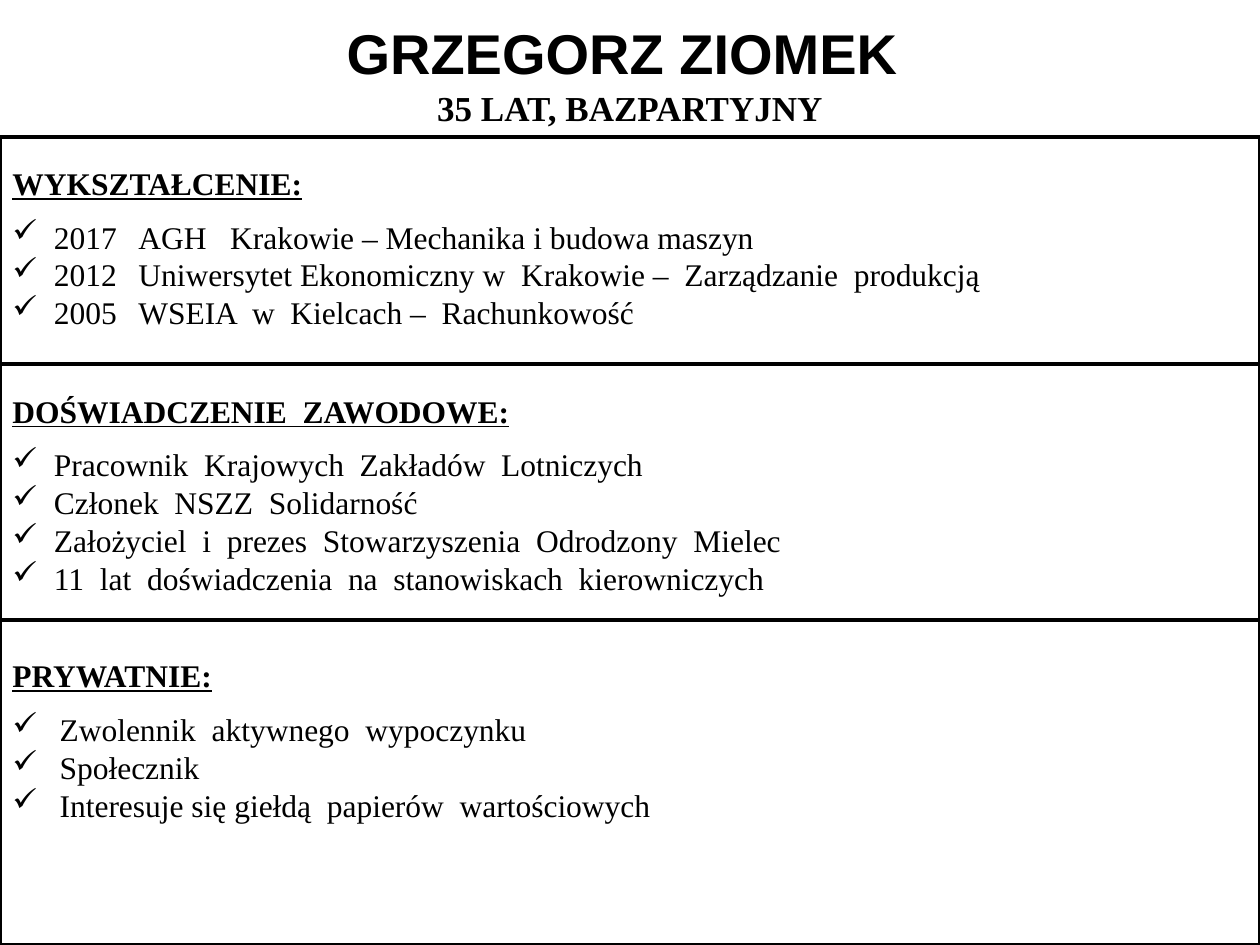
"""Build a candidate profile slide with three framed sections."""
from lxml.etree import SubElement
from pptx import Presentation
from pptx.dml.color import RGBColor
from pptx.enum.shapes import MSO_SHAPE
from pptx.enum.text import MSO_ANCHOR, PP_ALIGN
from pptx.oxml.ns import qn
from pptx.util import Pt


def color(code):
    return RGBColor.from_string(code)


def write(para, text, **form):
    para.text = text
    para.font.color.rgb = color("000000")
    for key, val in form.items():
        setattr(para.font, key, val)


deck = Presentation()
deck.slide_width, deck.slide_height = Pt(720), Pt(540)
slide = deck.slides.add_slide(deck.slide_layouts[6])
serif = {"name": "Times New Roman", "size": Pt(18)}

box = slide.shapes.add_textbox(0, 0, Pt(720), Pt(84))
frame = box.text_frame
frame.word_wrap = True
frame.vertical_anchor = MSO_ANCHOR.MIDDLE
lines = [
    ("GRZEGORZ ZIOMEK ", "Arial", 32),
    ("35 LAT, BAZPARTYJNY", "Times New Roman", 20),
]
for num, (text, face, size) in enumerate(lines):
    para = frame.add_paragraph() if num else frame.paragraphs[0]
    para.alignment = PP_ALIGN.CENTER
    write(para, text, name=face, size=Pt(size), bold=True)

parts = [
    (90, 106, 23.75, "WYKSZTAŁCENIE:", [
        "2017 \tAGH   Krakowie – Mechanika i budowa maszyn",
        "2012 \tUniwersytet Ekonomiczny w  Krakowie –  Zarządzanie  produkcją",
        "2005 \tWSEIA  w  Kielcach –  Rachunkowość",
    ]),
    (220.25, 128, 23.75, "DOŚWIADCZENIE  ZAWODOWE:", [
        "Pracownik  Krajowych  Zakładów  Lotniczych",
        "Członek  NSZZ  Solidarność",
        "Założyciel  i  prezes  Stowarzyszenia  Odrodzony  Mielec",
        "11  lat  doświadczenia  na  stanowiskach  kierowniczych",
    ]),
    (371.5, 104, 27, "PRYWATNIE:", [
        "Zwolennik  aktywnego  wypoczynku",
        "Społecznik",
        "Interesuje się giełdą  papierów  wartościowych",
    ]),
]
for top, height, gap, head, items in parts:
    box = slide.shapes.add_textbox(0, Pt(top), Pt(720), Pt(height))
    frame = box.text_frame
    frame.word_wrap = True
    para = frame.paragraphs[0]
    para.space_after = Pt(9.2)
    write(para, head, bold=True, underline=True, **serif)
    for text in items:
        para = frame.add_paragraph()
        props = para._p.get_or_add_pPr()
        props.set("marL", str(Pt(gap)))
        props.set("indent", str(-Pt(gap)))
        SubElement(props, qn("a:buChar"), char="✓")
        if "\t" in text:
            tabs = SubElement(props, qn("a:tabLst"))
            SubElement(tabs, qn("a:tab"), pos=str(Pt(72)), algn="l")
        write(para, text, **serif)

edges = [78.5, 208, 354.25, 540]
for top, end in zip(edges, edges[1:]):
    rect = slide.shapes.add_shape(
        MSO_SHAPE.RECTANGLE, 0, Pt(top), Pt(720), Pt(end - top))
    rect.shadow.inherit = False
    rect.fill.background()
    rect.line.color.rgb = color("000000")
    rect.line.width = Pt(2.25)

deck.save("out.pptx")
